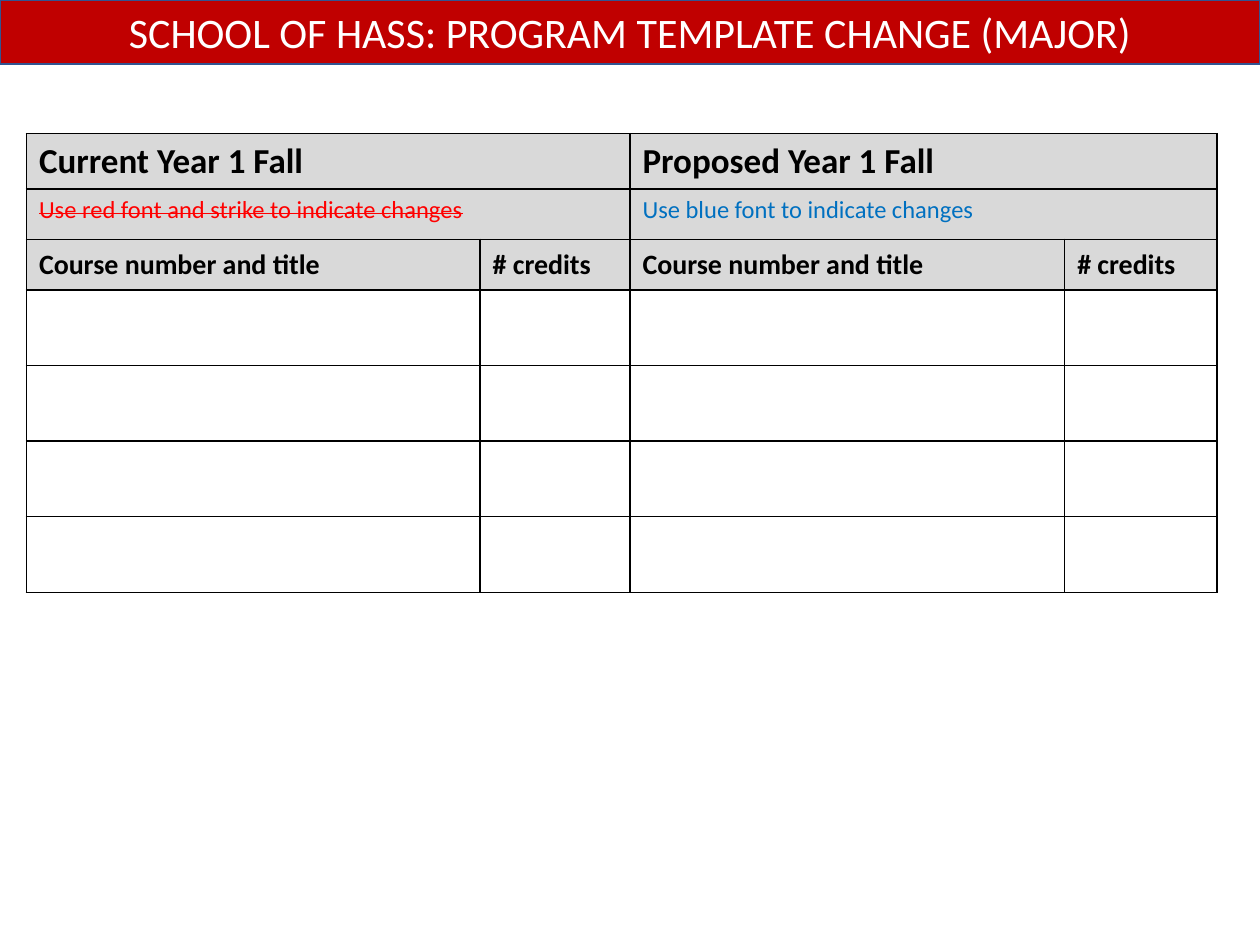
from dataclasses import dataclass

from lxml.etree import SubElement
from pptx import Presentation
from pptx.dml.color import RGBColor
from pptx.enum.shapes import MSO_SHAPE
from pptx.enum.text import MSO_ANCHOR, PP_ALIGN
from pptx.oxml.ns import qn
from pptx.util import Inches, Pt

COLS = [3.6, 1.19, 3.45, 1.21]
ROWS = [0.43, 0.4, 0.4] + [0.6] * 4
HEADER_ROWS = 3


@dataclass
class Entry:
    row: int
    col: int
    text: str
    size: int
    color: str = "000000"
    bold: bool = False
    strike: bool = False
    span: int = 1
    anchor: MSO_ANCHOR = MSO_ANCHOR.TOP


@dataclass
class Term:
    name: str
    hint: str
    color: str
    strike: bool
    col: int


TERMS = [
    Term("Current Year 1 Fall", "Use red font and strike to indicate changes", "FF0000", True, 0),
    Term("Proposed Year 1 Fall", "Use blue font to indicate changes", "0070C0", False, 2),
]


def rgb(value: str) -> RGBColor:
    return RGBColor.from_string(value)


def put_text(tf, text: str, *, size: int, color: str, bold: bool = False,
             strike: bool = False, align: PP_ALIGN = PP_ALIGN.LEFT) -> None:
    p = tf.paragraphs[0]
    p.alignment = align
    r = p.add_run()
    r.text = text
    r.font.name = "Calibri"
    r.font.size = Pt(size)
    r.font.bold = bold
    r.font.color.rgb = rgb(color)
    if strike:
        r._r.get_or_add_rPr().set("strike", "sngStrike")


def add_borders(cell, color: str, width: float) -> None:
    tcPr = cell._tc.get_or_add_tcPr()
    for side in ("lnL", "lnR", "lnT", "lnB"):
        ln = SubElement(tcPr, qn(f"a:{side}"), w=str(Pt(width)))
        fill = SubElement(ln, qn("a:solidFill"))
        SubElement(fill, qn("a:srgbClr"), val=color)


def term_entries(term: Term) -> list[Entry]:
    c = term.col
    return [
        Entry(0, c, term.name, 20, bold=True, span=2),
        Entry(1, c, term.hint, 14, term.color, strike=term.strike, span=2),
        Entry(2, c, "Course number and title", 16, bold=True, anchor=MSO_ANCHOR.MIDDLE),
        Entry(2, c + 1, "# credits", 16, bold=True, anchor=MSO_ANCHOR.MIDDLE),
    ]


def add_course_table(s) -> None:
    tbl = s.shapes.add_table(len(ROWS), len(COLS), Inches(0.21), Inches(1.06),
                             Inches(sum(COLS)), Inches(sum(ROWS))).table
    tbl.first_row = tbl.horz_banding = False
    for column, width in zip(tbl.columns, COLS):
        column.width = Inches(width)
    for i, (row, height) in enumerate(zip(tbl.rows, ROWS)):
        row.height = Inches(height)
        for cell in row.cells:
            add_borders(cell, "000000", 1)
            if i < HEADER_ROWS:
                cell.fill.solid()
                cell.fill.fore_color.rgb = rgb("D9D9D9")
            else:
                cell.fill.background()
    for term in TERMS:
        for e in term_entries(term):
            cell = tbl.cell(e.row, e.col)
            if e.span > 1:
                cell.merge(tbl.cell(e.row, e.col + e.span - 1))
            cell.vertical_anchor = e.anchor
            put_text(cell.text_frame, e.text, size=e.size, color=e.color,
                     bold=e.bold, strike=e.strike)


def add_banner(s, width: int, text: str) -> None:
    sp = s.shapes.add_shape(MSO_SHAPE.RECTANGLE, 0, 0, width, Inches(0.51))
    sp.shadow.inherit = False
    sp.fill.solid()
    sp.fill.fore_color.rgb = rgb("C00000")
    sp.line.color.rgb = rgb("325491")
    sp.line.width = Pt(1)
    tf = sp.text_frame
    tf.word_wrap = True
    tf.vertical_anchor = MSO_ANCHOR.MIDDLE
    put_text(tf, text, size=24, color="FFFFFF", align=PP_ALIGN.CENTER)


def main() -> None:
    prs = Presentation()
    prs.slide_width, prs.slide_height = Inches(10), Inches(7.5)
    s = prs.slides.add_slide(prs.slide_layouts[6])
    add_course_table(s)
    add_banner(s, prs.slide_width, "SCHOOL OF HASS: PROGRAM TEMPLATE CHANGE (MAJOR)")
    prs.save("out.pptx")


if __name__ == "__main__":
    main()
